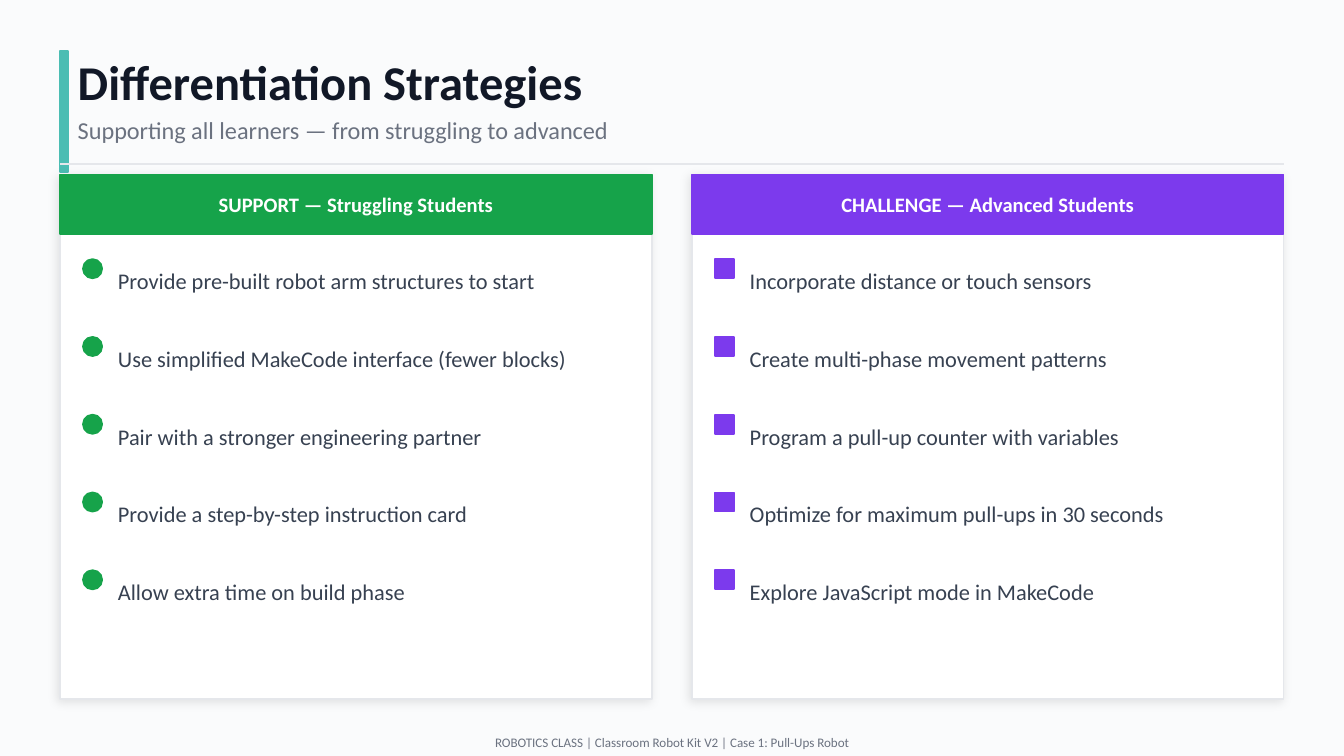
from lxml import etree
from pptx import Presentation
from pptx.dml.color import RGBColor
from pptx.enum.shapes import MSO_CONNECTOR, MSO_SHAPE
from pptx.enum.text import MSO_ANCHOR, PP_ALIGN
from pptx.oxml import parse_xml
from pptx.oxml.ns import nsdecls, qn
from pptx.util import Cm, Pt

BACKGROUND = RGBColor(0xFA, 0xFB, 0xFC)
TEAL = RGBColor(0x4B, 0xBD, 0xB3)
INK = RGBColor(0x11, 0x18, 0x27)
SLATE = RGBColor(0x37, 0x41, 0x51)
GRAY = RGBColor(0x6B, 0x72, 0x80)
RULE = RGBColor(0xE5, 0xE7, 0xEB)
WHITE = RGBColor(0xFF, 0xFF, 0xFF)
GREEN = RGBColor(0x16, 0xA3, 0x4A)
VIOLET = RGBColor(0x7C, 0x3A, 0xED)

MARGIN = 1.14
COLUMN_WIDTH = 11.18
COLUMN_GAP = 0.76
ROW_PITCH = 1.47

COLUMNS = [
    ("SUPPORT — Struggling Students", GREEN, MSO_SHAPE.OVAL, [
        "Provide pre-built robot arm structures to start",
        "Use simplified MakeCode interface (fewer blocks)",
        "Pair with a stronger engineering partner",
        "Provide a step-by-step instruction card",
        "Allow extra time on build phase",
    ]),
    ("CHALLENGE — Advanced Students", VIOLET, MSO_SHAPE.RECTANGLE, [
        "Incorporate distance or touch sensors",
        "Create multi-phase movement patterns",
        "Program a pull-up counter with variables",
        "Optimize for maximum pull-ups in 30 seconds",
        "Explore JavaScript mode in MakeCode",
    ]),
]


def write(shape, text, size, color, bold=False, align=PP_ALIGN.LEFT):
    """Fill a shape with one vertically centred paragraph."""
    frame = shape.text_frame
    frame.word_wrap = True
    frame.vertical_anchor = MSO_ANCHOR.MIDDLE
    frame.margin_left = frame.margin_right = frame.margin_top = frame.margin_bottom = 0
    paragraph = frame.paragraphs[0]
    paragraph.text = text
    paragraph.alignment = align
    font = paragraph.font
    font.name, font.size, font.bold = "Calibri", Pt(size), bold
    font.color.rgb = color


def add_label(slide, left, top, width, height, *style, **options):
    """Add a text box, positioned in centimetres."""
    box = slide.shapes.add_textbox(Cm(left), Cm(top), Cm(width), Cm(height))
    write(box, *style, **options)


def add_block(slide, kind, left, top, width, height, fill, outline=None):
    """Add a filled shape, positioned in centimetres."""
    block = slide.shapes.add_shape(kind, Cm(left), Cm(top), Cm(width), Cm(height))
    block.shadow.inherit = False
    block.fill.solid()
    block.fill.fore_color.rgb = fill
    block.line.color.rgb = outline or fill
    block.line.width = Pt(1)
    return block


def add_soft_shadow(card):
    """Give a card a faint shadow towards the lower left."""
    effects = card._element.spPr.find(qn("a:effectLst"))
    effects.append(parse_xml(
        f'<a:outerShdw {nsdecls("a")} blurRad="{Pt(5)}" dist="{Pt(2)}" dir="8100000" '
        'algn="bl" rotWithShape="0"><a:srgbClr val="000000"><a:alpha val="10000"/>'
        '</a:srgbClr></a:outerShdw>'))


def add_heading(slide, left, top, width):
    """Place the accent bar, title, subtitle and rule."""
    add_block(slide, MSO_SHAPE.RECTANGLE, left, top, 0.15, 2.29, TEAL)
    text_left = left + 0.33
    add_label(slide, text_left, top - 0.08, 21.59, 1.27,
              "Differentiation Strategies", 26, INK, bold=True)
    add_label(slide, text_left, top + 1.11, 21.59, 0.76,
              "Supporting all learners — from struggling to advanced", 13, GRAY)
    rule_top = Cm(top + 2.13)
    rule = slide.shapes.add_connector(
        MSO_CONNECTOR.STRAIGHT, Cm(left), rule_top, Cm(left + width), rule_top)
    rule.line.color.rgb = RULE
    rule.line.width = Pt(1)
    etree.SubElement(rule._element.spPr, qn("a:effectLst"))


def add_column(slide, left, top, width, height, heading, accent, marker, strategies):
    """Place a card with its header band and marked strategies."""
    card = add_block(slide, MSO_SHAPE.RECTANGLE, left, top, width, height, WHITE, RULE)
    add_soft_shadow(card)
    band = add_block(slide, MSO_SHAPE.RECTANGLE, left, top, width, 1.12, accent)
    write(band, heading, 11, WHITE, bold=True, align=PP_ALIGN.CENTER)
    for row, strategy in enumerate(strategies):
        row_top = top + 1.47 + row * ROW_PITCH
        add_block(slide, marker, left + 0.43, row_top + 0.13, 0.36, 0.36, accent)
        add_label(slide, left + 1.09, row_top, width - 1.53, 1.07, strategy, 12, SLATE)


def add_footer(slide, left, top, width, height):
    """Place the centred footer line."""
    add_label(slide, left, top, width, height,
              "ROBOTICS CLASS | Classroom Robot Kit V2 | Case 1: Pull-Ups Robot",
              7, GRAY, align=PP_ALIGN.CENTER)


def main():
    """Build and save the slide."""
    deck = Presentation()
    deck.slide_width, deck.slide_height = Cm(25.4), Cm(14.29)
    slide = deck.slides.add_slide(deck.slide_layouts[6])
    slide.background.fill.solid()
    slide.background.fill.fore_color.rgb = BACKGROUND
    add_heading(slide, MARGIN, 0.97, 2 * COLUMN_WIDTH + COLUMN_GAP)
    for index, column in enumerate(COLUMNS):
        left = MARGIN + index * (COLUMN_WIDTH + COLUMN_GAP)
        add_column(slide, left, 3.3, COLUMN_WIDTH, 9.91, *column)
    add_footer(slide, 0, 13.77, 25.4, 0.51)
    deck.save("out.pptx")


if __name__ == "__main__":
    main()
